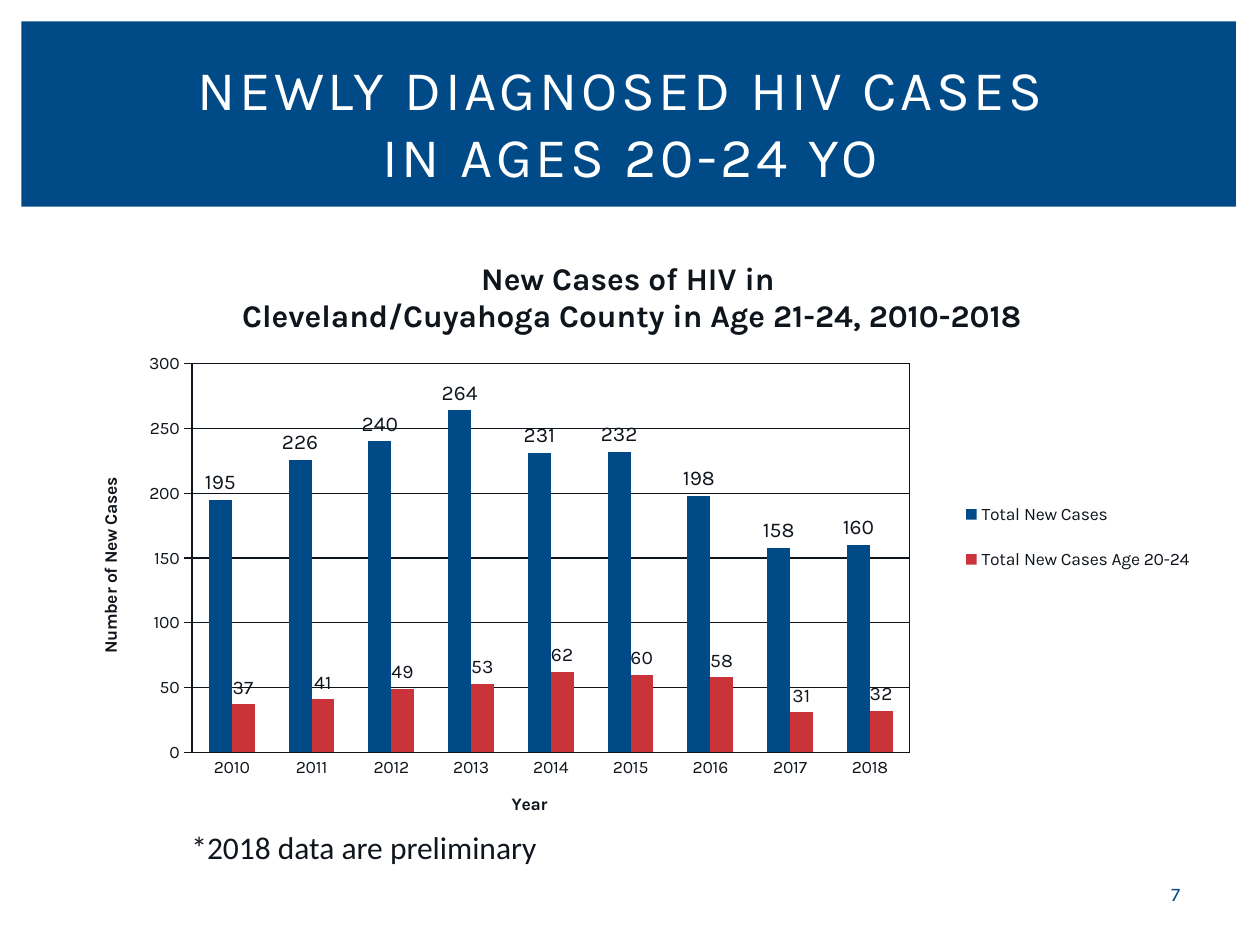
from lxml import etree
from pptx import Presentation, util as u
from pptx.chart.data import CategoryChartData
from pptx.dml.color import RGBColor
from pptx.enum import chart as ch, shapes, text
from pptx.oxml import parse_xml
from pptx.oxml.ns import nsdecls, qn

W, H = 10, 7.5
NAVY, RED, INK, WHITE = "004B87", "CB333B", "0F151C", "FFFFFF"
YEARS = [str(year) for year in range(2010, 2019)]
SERIES = [
    ("Total New Cases", (195, 226, 240, 264, 231, 232, 198, 158, 160), NAVY, 12),
    ("Total New Cases Age 20-24", (37, 41, 49, 53, 62, 60, 58, 31, 32), RED, 11),
]


def rgb(value):
    return RGBColor.from_string(value)


def inches(box):
    return [u.Inches(v) for v in box]


def style(font, size, color=INK, bold=False, name="Karla"):
    font.size, font.bold, font.name = u.Pt(size), bold, name
    font.color.rgb = rgb(color)


def add_text(s, box, words, size, color, name="Karla", align=text.PP_ALIGN.CENTER,
             anchor=text.MSO_ANCHOR.MIDDLE, spacing=0):
    tf = s.shapes.add_textbox(*inches(box)).text_frame
    tf.word_wrap, tf.vertical_anchor = True, anchor
    tf.text = words
    p = tf.paragraphs[0]
    p.alignment = align
    for r in p.runs:
        style(r.font, size, color, name=name)
        if spacing:
            r.font._element.set("spc", str(spacing * 100))


def add_banner(s, box):
    x, y, w, h = box
    band = s.shapes.add_shape(shapes.MSO_SHAPE.RECTANGLE, *inches(box))
    band.shadow.inherit = False
    band.fill.solid()
    band.fill.fore_color.rgb = rgb(NAVY)
    band.line.fill.background()
    add_text(s, (x + 0.25, y + 0.22, w - 0.47, h - 0.32),
             "NEWLY DIAGNOSED HIV CASES \vIN AGES 20-24 YO", 32, WHITE, spacing=2)


def set_layout(parent, index, box, inner=False):
    for old in parent.findall(qn("c:layout")):
        parent.remove(old)
    layout = parse_xml(f"<c:layout {nsdecls('c')}><c:manualLayout/></c:layout>")
    values = [("layoutTarget", "inner")] if inner else []
    values += [("xMode", "edge"), ("yMode", "edge"), *zip("xywh", box)]
    for tag, value in values:
        etree.SubElement(layout[0], qn(f"c:{tag}")).set("val", str(value))
    parent.insert(index, layout)


def set_title(holder, words, size):
    tf = holder.text_frame
    tf.text = words
    for p in tf.paragraphs:
        for r in p.runs:
            style(r.font, size, bold=True)


def style_line(line):
    line.color.rgb, line.width = rgb(INK), u.Pt(0.75)


def add_cases_chart(s, box):
    data = CategoryChartData()
    data.categories = YEARS
    for name, values, _, _ in SERIES:
        data.add_series(name, values)
    chart = s.shapes.add_chart(ch.XL_CHART_TYPE.COLUMN_CLUSTERED, *inches(box), data).chart
    style(chart.font, 10)
    chart.has_title = True
    set_title(chart.chart_title, "New Cases of HIV in \nCleveland/Cuyahoga County in Age 21-24, 2010-2018", 18)

    years, cases = chart.category_axis, chart.value_axis
    for axis, words in ((years, "Year"), (cases, "Number of New Cases")):
        set_title(axis.axis_title, words, 10)
        style_line(axis.format.line)
    years.major_tick_mark = ch.XL_TICK_MARK.NONE
    cases.major_tick_mark = ch.XL_TICK_MARK.OUTSIDE
    cases.minimum_scale, cases.maximum_scale, cases.major_unit = 0, 300, 50
    style_line(cases.major_gridlines.format.line)

    plot = chart.plots[0]
    plot.gap_width, plot.overlap, plot.vary_by_categories = 150, 0, False
    for series, (_, _, color, size) in zip(plot.series, SERIES):
        series.format.fill.solid()
        series.format.fill.fore_color.rgb = rgb(color)
        labels = series.data_labels
        labels.show_value = True
        labels.position = ch.XL_LABEL_POSITION.OUTSIDE_END
        style(labels.font, size)

    chart.has_legend = True
    legend = chart.legend
    legend.position, legend.include_in_layout = ch.XL_LEGEND_POSITION.RIGHT, False
    style(legend.font, 10)
    set_layout(legend._element, 1, (0.78, 0.4, 0.21, 0.19))
    area = chart._chartSpace.chart.plotArea
    set_layout(area, 0, (0.12, 0.21, 0.62, 0.64), inner=True)
    area.append(parse_xml(
        f'<c:spPr {nsdecls("c", "a")}><a:noFill/><a:ln w="{u.Pt(0.75)}"><a:solidFill>'
        f'<a:srgbClr val="{INK}"/></a:solidFill></a:ln></c:spPr>'))


def add_footer(s, box):
    x, y, w, h = box
    add_text(s, (x, y, w * 0.53, 0.42), "*2018 data are preliminary", 18, INK, "Calibri",
             text.PP_ALIGN.LEFT, text.MSO_ANCHOR.TOP)
    add_text(s, (x + w - 0.64, y + h - 0.3, 0.64, 0.3), "7", 11, NAVY)


def main():
    prs = Presentation()
    prs.slide_width, prs.slide_height = inches((W, H))
    s = prs.slides.add_slide(prs.slide_layouts[6])
    add_banner(s, (0.17, 0.17, 9.64, 1.47))
    add_cases_chart(s, (0.42, H * 0.25, 9.19, 4.82))
    add_footer(s, (1.42, H * 0.87, 8.23, 0.72))
    prs.save("out.pptx")


if __name__ == "__main__":
    main()
